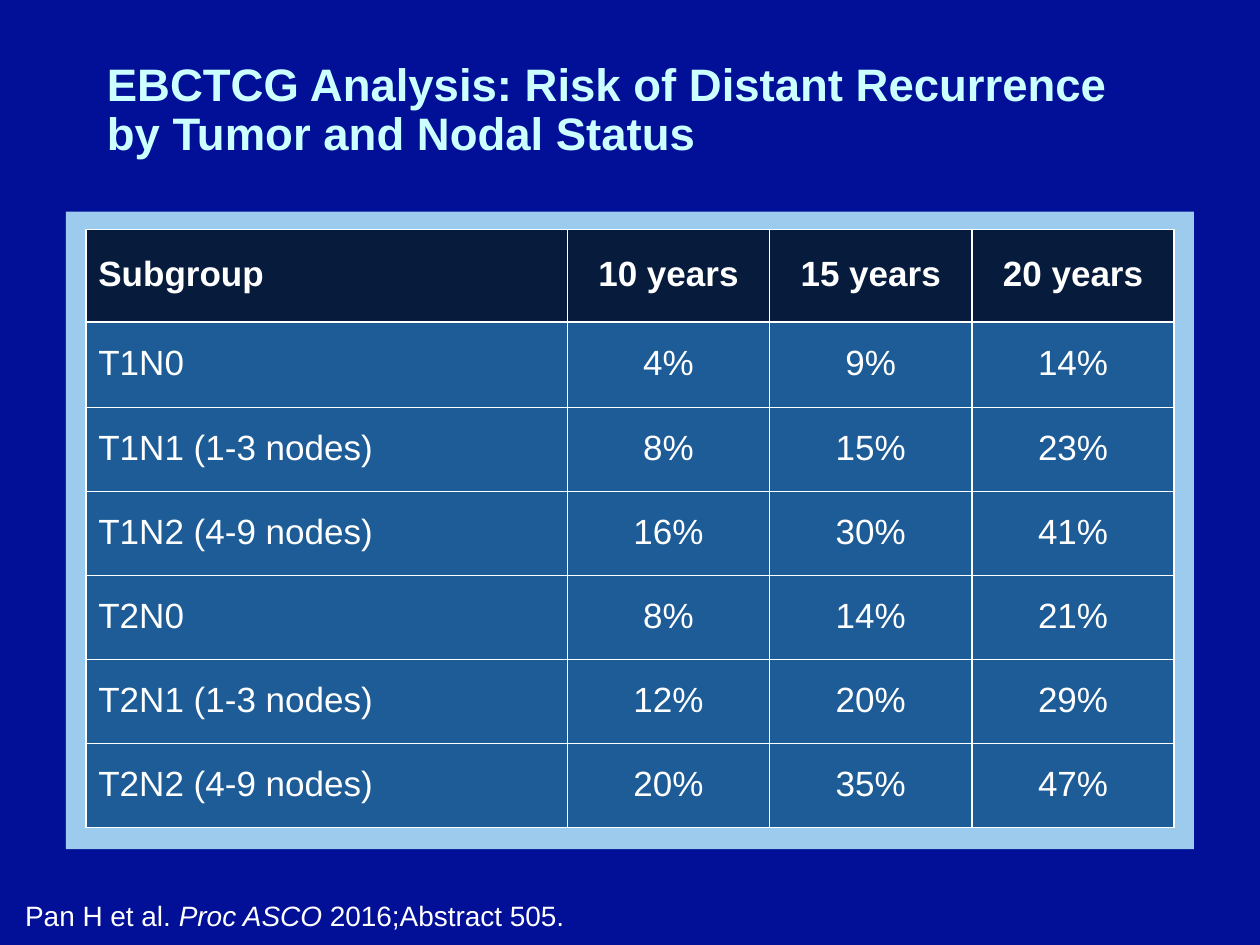
import pptx
import pptx.dml.color
import pptx.enum.shapes
import pptx.enum.text
import pptx.oxml
import pptx.oxml.ns
import pptx.util
from pptx.util import Pt

ALIGN = pptx.enum.text.PP_ALIGN
ANCHOR = pptx.enum.text.MSO_ANCHOR
WHITE = "FFFFFF"

HEADINGS = ["Subgroup", "10 years", "15 years", "20 years"]
RISKS = [
    ["T1N0", "4%", "9%", "14%"],
    ["T1N1 (1-3 nodes)", "8%", "15%", "23%"],
    ["T1N2 (4-9 nodes)", "16%", "30%", "41%"],
    ["T2N0", "8%", "14%", "21%"],
    ["T2N1 (1-3 nodes)", "12%", "20%", "29%"],
    ["T2N2 (4-9 nodes)", "20%", "35%", "47%"],
]


def paint(fill, color):
    fill.solid()
    fill.fore_color.rgb = pptx.dml.color.RGBColor.from_string(color)


def style_font(font, size, color=WHITE, bold=False, italic=False):
    font.name = "Arial"
    font.size = Pt(size)
    font.bold = bold
    font.italic = italic
    paint(font.fill, color)


def add_panel(page, left, top, width, height, color):
    panel = page.shapes.add_shape(
        pptx.enum.shapes.MSO_SHAPE.RECTANGLE, Pt(left), Pt(top), Pt(width), Pt(height))
    panel.shadow.inherit = False
    paint(panel.fill, color)
    panel.line.fill.background()


def add_text_frame(page, left, top, width, height, anchor):
    box = page.shapes.add_textbox(Pt(left), Pt(top), Pt(width), Pt(height))
    frame = box.text_frame
    frame.word_wrap = True
    frame.vertical_anchor = anchor
    return frame


def add_title(page, text):
    frame = add_text_frame(page, 54, 18.72, 612, 90, ANCHOR.MIDDLE)
    frame.text = text
    para = frame.paragraphs[0]
    para.line_spacing = 0.9
    style_font(para.runs[0].font, 26, "CCFFFF", bold=True)


def add_citation(page, parts):
    """Add the source line from (text, italic) pairs."""
    frame = add_text_frame(page, 0, 509.76, 720, 30.24, ANCHOR.BOTTOM)
    frame.margin_left = Pt(14.4)
    frame.margin_bottom = Pt(7.2)
    for text, italic in parts:
        span = frame.paragraphs[0].add_run()
        span.text = text
        style_font(span.font, 16, italic=italic)


def add_borders(cell, color, width):
    properties = cell._tc.get_or_add_tcPr()
    for index, side in enumerate(("lnL", "lnR", "lnT", "lnB")):
        properties.insert(index, pptx.oxml.parse_xml(
            f'<a:{side} {pptx.oxml.ns.nsdecls("a")} w="{Pt(width)}"><a:solidFill>'
            f'<a:srgbClr val="{color}"/></a:solidFill></a:{side}>'))


def fill_cell(cell, text, color, align, bold):
    cell.vertical_anchor = ANCHOR.MIDDLE
    cell.text = text
    para = cell.text_frame.paragraphs[0]
    para.alignment = align
    para.line_spacing = 0.9
    style_font(para.runs[0].font, 20, bold=bold)
    paint(cell.fill, color)
    add_borders(cell, WHITE, 1)


def add_risk_table(page):
    rows = [HEADINGS] + RISKS
    widths = [275.2] + [115.6] * 3
    heights = [52.8, 49] + [48] * 5
    table = page.shapes.add_table(
        len(rows), len(widths), Pt(49), Pt(131.2),
        Pt(sum(widths)), Pt(sum(heights))).table
    for column, width in zip(table.columns, widths):
        column.width = Pt(width)
    for row, height in zip(table.rows, heights):
        row.height = Pt(height)
    for r, texts in enumerate(rows):
        for c, text in enumerate(texts):
            fill_cell(table.cell(r, c), text,
                      color="1D5C96" if r else "071C3C",
                      align=ALIGN.CENTER if c else ALIGN.LEFT,
                      bold=r == 0)


def main():
    deck = pptx.Presentation()
    deck.slide_width, deck.slide_height = Pt(720), Pt(540)
    page = deck.slides.add_slide(deck.slide_layouts[6])
    paint(page.background.fill, "011097")
    add_panel(page, 37.7, 121, 644.5, 364.2, "9CCBED")
    add_title(page, "EBCTCG Analysis: Risk of Distant Recurrence by Tumor and Nodal Status")
    add_risk_table(page)
    add_citation(page, [("Pan H et al. ", False), ("Proc ASCO ", True),
                        ("2016;Abstract 505.", False)])
    deck.save("out.pptx")


if __name__ == "__main__":
    main()
